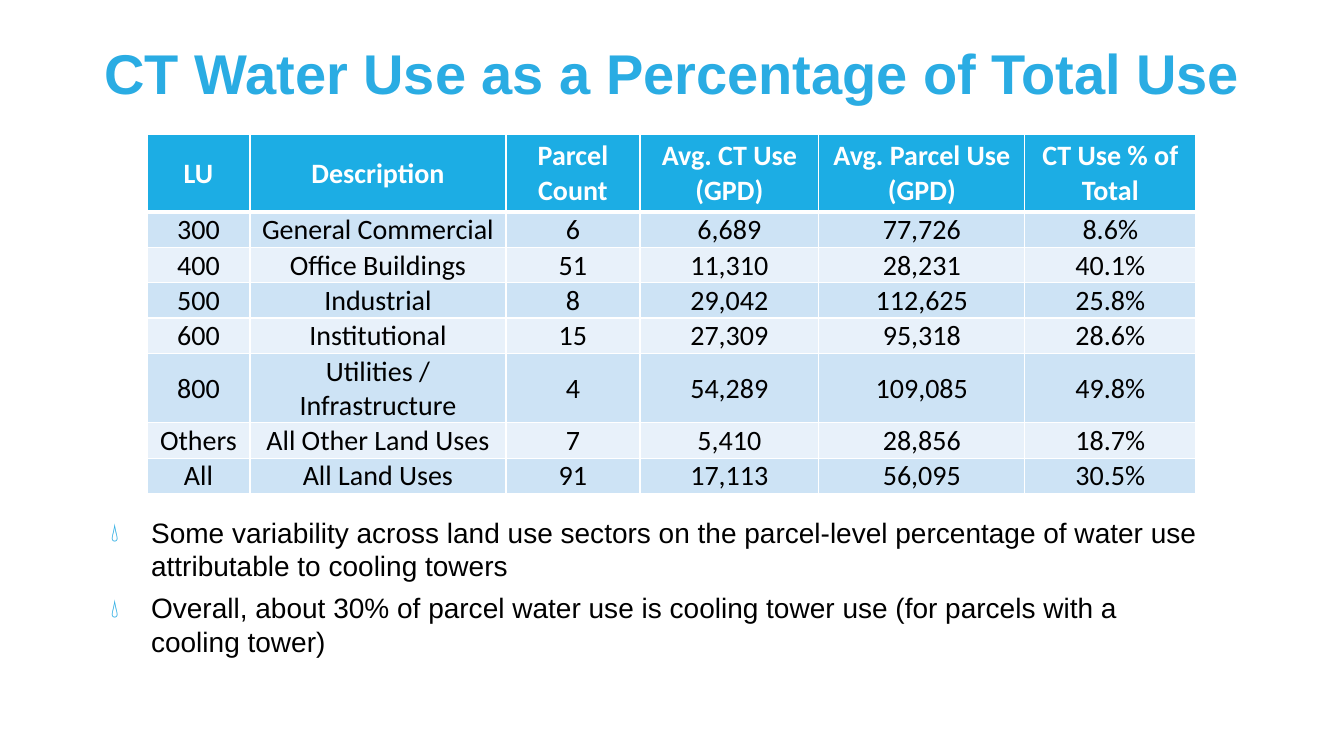
"""Build the slide on cooling tower water use as a share of total parcel use."""
from dataclasses import dataclass

from lxml.etree import SubElement
from pptx import Presentation
from pptx.dml.color import RGBColor
from pptx.enum.text import MSO_ANCHOR, MSO_AUTO_SIZE, PP_ALIGN
from pptx.oxml.ns import qn
from pptx.util import Emu, Pt

TITLE = "CT Water Use as a Percentage of Total Use"
HEADER = ("LU", "Description", "Parcel Count", "Avg. CT Use (GPD)",
          "Avg. Parcel Use (GPD)", "CT Use % of Total")
LAND_USES = [
    ("300", "General Commercial", "6", "6,689", "77,726", "8.6%"),
    ("400", "Office Buildings", "51", "11,310", "28,231", "40.1%"),
    ("500", "Industrial", "8", "29,042", "112,625", "25.8%"),
    ("600", "Institutional", "15", "27,309", "95,318", "28.6%"),
    ("800", "Utilities / Infrastructure", "4", "54,289", "109,085", "49.8%"),
    ("Others", "All Other Land Uses", "7", "5,410", "28,856", "18.7%"),
    ("All", "All Land Uses", "91", "17,113", "56,095", "30.5%"),
]
FINDINGS = [
    "Some variability across land use sectors on the parcel-level percentage "
    "of water use attributable to cooling towers",
    "Overall, about 30% of parcel water use is cooling tower use "
    "(for parcels with a cooling tower)",
]
COLUMN_WIDTHS = (103, 256, 134, 179, 206, 171)
HEADER_HEIGHT, ROW_HEIGHT, TALL_ROW_HEIGHT = 78, 35, 69
TALL_ROW = 5
BULLET_INDENT = 40


@dataclass(frozen=True)
class Theme:
    """Colours, fonts and type sizes of the slide."""
    accent: str = "2AACE3"
    header: str = "1CADE4"
    bands: tuple = ("E8F1FA", "CDE3F5")
    white: str = "FFFFFF"
    black: str = "000000"
    text_font: str = "Arial"
    table_font: str = "Calibri"
    title_size: int = 40
    text_size: int = 20


THEME = Theme()


def px(length):
    """Turn px into EMU."""
    return Emu(round(length * 914400 / 100.8))


def place(shape, left, top, width, height):
    """Set the frame of a shape in px."""
    shape.left, shape.top = px(left), px(top)
    shape.width, shape.height = px(width), px(height)


def style(para, font, size, colour, bold=False):
    """Format every run of a paragraph."""
    for span in para.runs:
        span.font.name, span.font.size, span.font.bold = font, Pt(size), bold
        span.font.color.rgb = RGBColor.from_string(colour)


def add_bullet(para):
    """Give a paragraph a hanging droplet bullet."""
    properties = para._p.get_or_add_pPr()
    properties.set("marL", str(px(BULLET_INDENT)))
    properties.set("indent", str(-px(BULLET_INDENT)))
    colour = SubElement(properties, qn("a:buClr"))
    SubElement(colour, qn("a:srgbClr"), val=THEME.accent)
    SubElement(properties, qn("a:buSzPct"), val="70000")
    SubElement(properties, qn("a:buChar"), char="💧")


def set_borders(cell, top, bottom):
    """Draw white cell borders, with top and bottom widths in points."""
    properties = cell._tc.get_or_add_tcPr()
    for side, width in (("L", 1), ("R", 1), ("T", top), ("B", bottom)):
        line = SubElement(properties, qn(f"a:ln{side}"), w=str(Pt(width)))
        fill = SubElement(line, qn("a:solidFill"))
        SubElement(fill, qn("a:srgbClr"), val=THEME.white)


def fill_cell(cell, text, row):
    """Write and format one table cell."""
    is_header = row == 0
    set_borders(cell, 3 if row == 1 else 1, 3 if is_header else 1)
    cell.fill.solid()
    cell.fill.fore_color.rgb = RGBColor.from_string(
        THEME.header if is_header else THEME.bands[row % 2])
    cell.margin_left = cell.margin_right = cell.margin_top = px(1)
    cell.margin_bottom = 0
    cell.vertical_anchor = MSO_ANCHOR.MIDDLE
    cell.text_frame.text = text
    para = cell.text_frame.paragraphs[0]
    para.alignment = PP_ALIGN.CENTER
    style(para, THEME.table_font, THEME.text_size,
          THEME.white if is_header else THEME.black, is_header)


def add_title(page):
    """Fill the title placeholder."""
    title = page.shapes.title
    place(title, 0, 41, 1344, 203)
    frame = title.text_frame
    frame.text = TITLE
    frame.auto_size = MSO_AUTO_SIZE.NONE
    frame.vertical_anchor = MSO_ANCHOR.TOP
    para = frame.paragraphs[0]
    para.alignment, para.line_spacing = PP_ALIGN.CENTER, 0.9
    style(para, THEME.text_font, THEME.title_size, THEME.accent, True)


def add_findings(page):
    """Fill the body placeholder with the bulleted findings."""
    body = page.placeholders[1]
    place(body, 101, 510, 1117, 242)
    frame = body.text_frame
    frame.text = "\n".join(FINDINGS)
    frame.auto_size = MSO_AUTO_SIZE.NONE
    for para in frame.paragraphs:
        add_bullet(para)
        para.space_before, para.space_after = Pt(0), Pt(6)
        style(para, THEME.text_font, THEME.text_size, THEME.black)


def add_water_table(page):
    """Add the table of water use by land use."""
    rows = [HEADER, *LAND_USES]
    heights = [HEADER_HEIGHT] + [ROW_HEIGHT] * len(LAND_USES)
    heights[TALL_ROW] = TALL_ROW_HEIGHT
    table = page.shapes.add_table(
        len(rows), len(HEADER), px(147), px(134),
        px(sum(COLUMN_WIDTHS)), px(sum(heights))).table
    for column, width in zip(table.columns, COLUMN_WIDTHS):
        column.width = px(width)
    for row, (texts, height) in enumerate(zip(rows, heights)):
        table.rows[row].height = px(height)
        for column, text in enumerate(texts):
            fill_cell(table.cell(row, column), text, row)


def main():
    """Build and save the deck."""
    deck = Presentation()
    deck.slide_width, deck.slide_height = px(1344), px(756)
    page = deck.slides.add_slide(deck.slide_layouts[1])
    add_title(page)
    add_findings(page)
    add_water_table(page)
    deck.save("out.pptx")


if __name__ == "__main__":
    main()
